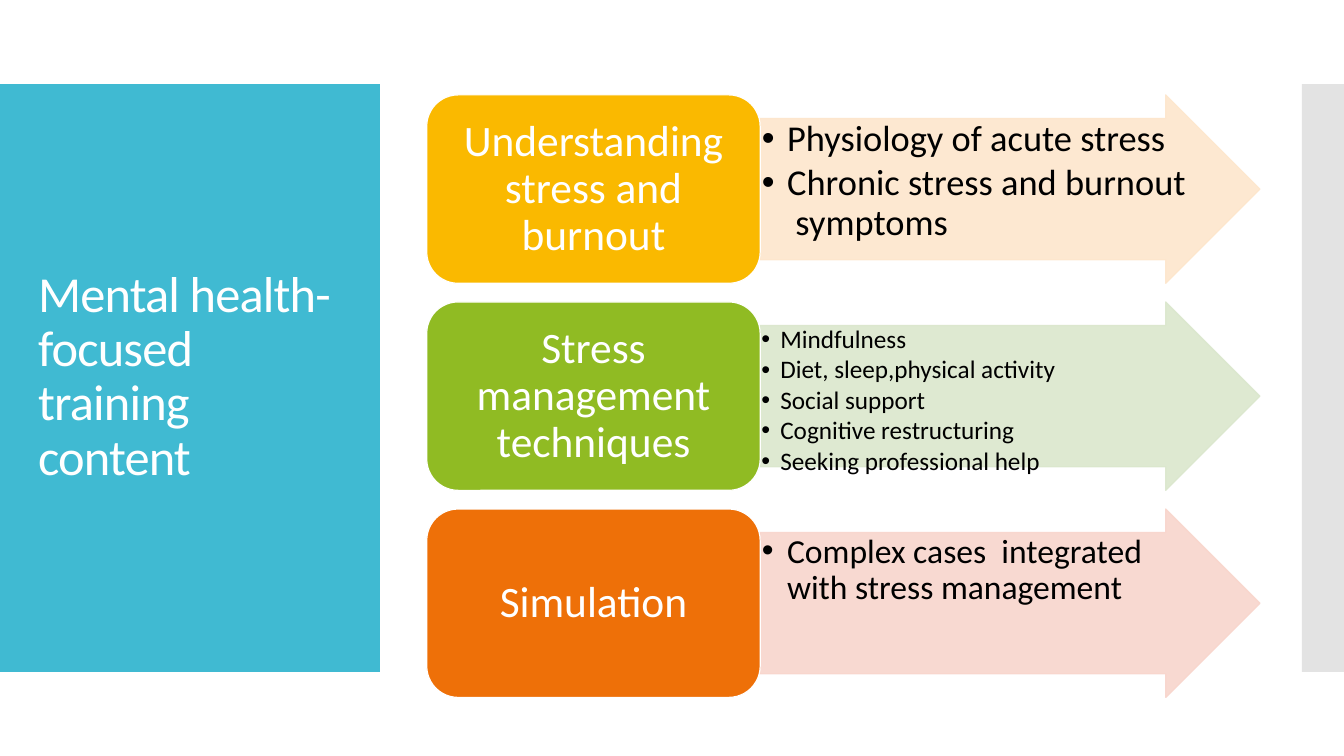
from dataclasses import dataclass

from lxml.etree import SubElement
from pptx import Presentation
from pptx.dml.color import RGBColor
from pptx.enum.shapes import MSO_SHAPE as Shape
from pptx.enum.text import MSO_ANCHOR as Anchor, PP_ALIGN as Align
from pptx.oxml.ns import qn
from pptx.util import Pt


@dataclass(frozen=True)
class Theme:
    font: str = "Calibri"
    title_size: int = 36
    topic_size: int = 31
    white: str = "FFFFFF"
    black: str = "000000"
    panel: str = "40BAD2"
    strip: str = "C8C8C8"
    outline: float = 0.85
    leading: float = 0.9


@dataclass(frozen=True)
class Topic:
    name: str
    color: str
    tint: str
    size: int
    indent: float
    inset: float
    points: tuple


TOPICS = (
    Topic("Understanding stress and burnout", "FAB900", "FDE6CC", 26, 18, 1.3,
          ("Physiology of acute stress", "Chronic stress and burnout  symptoms")),
    Topic("Stress management techniques", "90BB23", "DBE7CD", 18, 13.5, 0.9,
          ("Mindfulness", "Diet, sleep,physical activity", "Social support",
           "Cognitive restructuring", "Seeking professional help")),
    Topic("Simulation", "EE7008", "F8D5CC", 24, 18, 1.2,
          ("Complex cases  integrated  with stress management",)),
)

ROW_TOP, ROW_PITCH, ROW_HEIGHT = 67.8, 147.9, 134.6
BOX_LEFT, BOX_WIDTH, ARROW_WIDTH = 304.8, 238.2, 357


class SlideBuilder:
    def __init__(self, slide, theme):
        self.slide = slide
        self.theme = theme

    def paint(self, fill, color, alpha):
        fill.solid()
        fill.fore_color.rgb = RGBColor.from_string(color)
        if alpha < 100:
            clr = fill._xPr.find(f".//{qn('a:srgbClr')}")
            SubElement(clr, qn("a:alpha"), val=str(alpha * 1000))

    def shape(self, kind, box, color, line=None, alpha=100):
        sp = self.slide.shapes.add_shape(kind, *map(Pt, box))
        sp.shadow.inherit = False
        self.paint(sp.fill, color, alpha)
        if line:
            self.paint(sp.line.fill, line, alpha)
            sp.line.width = Pt(self.theme.outline)
        else:
            sp.line.fill.background()
        return sp

    def frame(self, sp, anchor, inset_x, inset_y):
        tf = sp.text_frame
        tf.word_wrap = True
        tf.vertical_anchor = anchor
        tf.margin_left = tf.margin_right = Pt(inset_x)
        tf.margin_top = tf.margin_bottom = Pt(inset_y)
        return tf

    def paragraph(self, p, text, size, color, align=Align.LEFT):
        p.text = text
        p.alignment = align
        p.line_spacing = self.theme.leading
        for r in p.runs:
            r.font.name = self.theme.font
            r.font.size = Pt(size)
            r.font.color.rgb = RGBColor.from_string(color)

    def bullet(self, p, indent):
        pPr = p._p.get_or_add_pPr()
        pPr.set("marL", str(Pt(indent)))
        pPr.set("indent", str(-Pt(indent)))
        SubElement(pPr, qn("a:buFont"), typeface="Arial")
        SubElement(pPr, qn("a:buChar"), char="•")

    def title(self, text, box):
        sp = self.slide.shapes.title
        sp.left, sp.top, sp.width, sp.height = map(Pt, box)
        tf = self.frame(sp, Anchor.MIDDLE, 7.2, 3.6)
        p = tf.paragraphs[0]
        self.paragraph(p, text, self.theme.title_size, self.theme.white)
        p.runs[0].font._element.set("spc", "-60")
        # The title belongs in front of the panel drawn so far.
        self.slide.shapes._spTree.append(sp._element)

    def arrow(self, topic, top):
        box = (BOX_LEFT + BOX_WIDTH, top, ARROW_WIDTH, ROW_HEIGHT)
        sp = self.shape(Shape.RIGHT_ARROW, box, topic.tint, topic.tint, 90)
        sp.adjustments[0] = 0.75
        sp.adjustments[1] = 0.5
        tf = self.frame(sp, Anchor.TOP, topic.inset, topic.inset)
        for i, point in enumerate(topic.points):
            p = tf.add_paragraph() if i else tf.paragraphs[0]
            self.paragraph(p, point, topic.size, self.theme.black)
            p.space_after = Pt(round(topic.size * 0.13, 1))
            self.bullet(p, topic.indent)

    def topic_box(self, topic, top):
        box = (BOX_LEFT, top, BOX_WIDTH, ROW_HEIGHT)
        sp = self.shape(Shape.ROUNDED_RECTANGLE, box, topic.color, self.theme.white)
        tf = self.frame(sp, Anchor.MIDDLE, 9.2, 4.6)
        self.paragraph(tf.paragraphs[0], topic.name, self.theme.topic_size,
                       self.theme.white, Align.CENTER)


def main():
    prs = Presentation()
    prs.slide_width, prs.slide_height = Pt(960), Pt(540)
    theme = Theme()
    builder = SlideBuilder(prs.slides.add_slide(prs.slide_layouts[5]), theme)

    builder.shape(Shape.RECTANGLE, (0, 60, 271.4, 420), theme.panel)
    builder.shape(Shape.RECTANGLE, (930, 60, 30, 420), theme.strip, alpha=50)
    builder.title("Mental health-focused training content", (20, 88.6, 231.8, 362))
    for i, topic in enumerate(TOPICS):
        top = ROW_TOP + i * ROW_PITCH
        builder.arrow(topic, top)
        builder.topic_box(topic, top)
    prs.save("out.pptx")


if __name__ == "__main__":
    main()
